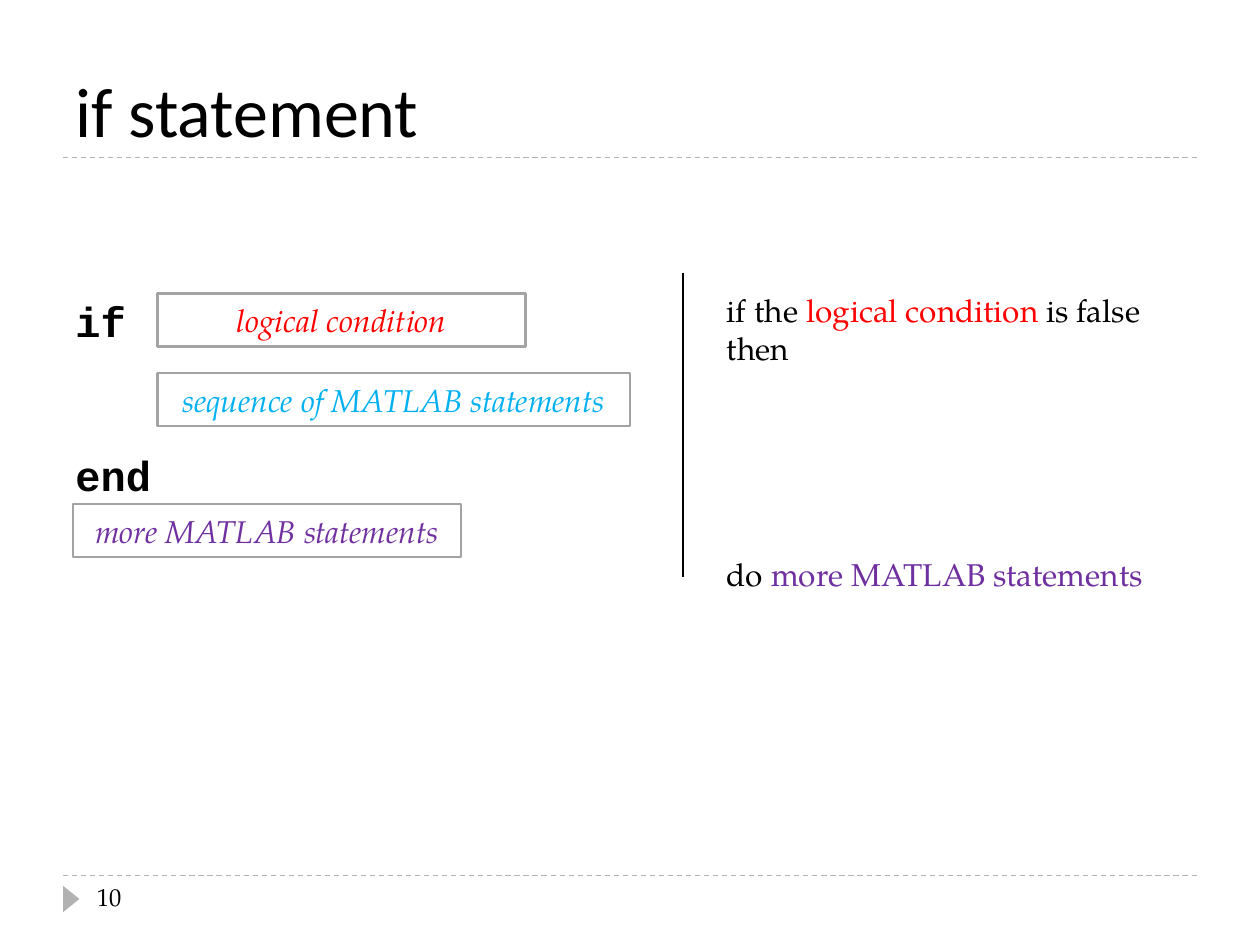
"""Build the slide that explains the if statement."""
import dataclasses

import lxml.etree
import pptx
import pptx.dml.color
import pptx.enum.dml
import pptx.enum.shapes
import pptx.enum.text
import pptx.oxml.ns
import pptx.util

Inches = pptx.util.Inches
Pt = pptx.util.Pt
Shape = pptx.enum.shapes.MSO_SHAPE
Align = pptx.enum.text.PP_ALIGN
Anchor = pptx.enum.text.MSO_ANCHOR

HEX = {
    "black": "000000",
    "red": "FF0000",
    "blue": "00B0F0",
    "purple": "7030A0",
    "gray": "B2B2B2",
    "edge": "A3A3A3",
}
SERIF = "TeX Gyre Pagella"


@dataclasses.dataclass
class Box:
    text: str
    color: str
    left: float
    top: float
    width: float


@dataclasses.dataclass
class Rule:
    start: tuple[float, float]
    end: tuple[float, float]
    color: str
    dashed: bool


BOXES = [
    Box("sequence of MATLAB statements", "blue", 1.25, 2.96, 3.75),
    Box("logical condition", "red", 1.25, 2.33, 2.92),
    Box("more MATLAB statements", "purple", 0.58, 4, 3.08),
]
RULES = [
    Rule((0.5, 6.95), (9.5, 6.95), "gray", True),
    Rule((0.5, 1.25), (9.5, 1.25), "gray", True),
    Rule((5.42, 2.17), (5.42, 4.58), "black", False),
]


def color(name: str) -> pptx.dml.color.RGBColor:
    return pptx.dml.color.RGBColor.from_string(HEX[name])


def write(frame, *lines, font=SERIF, size=18, bold=False, slant=False,
          align=Align.LEFT, anchor=Anchor.TOP, gap=0) -> None:
    """Write lines of (text, color) runs, with a gap in points between lines."""
    frame.word_wrap = True
    frame.auto_size = pptx.enum.text.MSO_AUTO_SIZE.NONE
    frame.vertical_anchor = anchor
    for i, line in enumerate(lines):
        para = frame.add_paragraph() if i else frame.paragraphs[0]
        para.alignment = align
        para.space_before = Pt(gap if i else 0)
        for text, tint in line:
            run = para.add_run()
            run.text = text
            run.font.name = font
            run.font.size = Pt(size)
            run.font.bold = bold
            run.font.italic = slant
            run.font.color.rgb = color(tint)


def add_text(slide, left: float, top: float, width: float, height: float,
             *lines, **style) -> None:
    area = slide.shapes.add_textbox(
        Inches(left), Inches(top), Inches(width), Inches(height))
    write(area.text_frame, *lines, **style)


def add_box(slide, box: Box) -> None:
    shape = slide.shapes.add_shape(
        Shape.RECTANGLE, Inches(box.left), Inches(box.top),
        Inches(box.width), Inches(0.42))
    shape.shadow.inherit = False
    shape.fill.background()
    shape.line.color.rgb = color("edge")
    shape.line.width = Pt(1.5)
    write(shape.text_frame, [(box.text, box.color)], slant=True,
          align=Align.CENTER, anchor=Anchor.MIDDLE)


def add_rule(slide, rule: Rule) -> None:
    line = slide.shapes.add_connector(
        pptx.enum.shapes.MSO_CONNECTOR.STRAIGHT,
        *map(Inches, rule.start + rule.end))
    line.line.color.rgb = color(rule.color)
    line.line.width = Pt(0.75)
    if rule.dashed:
        line.line.dash_style = pptx.enum.dml.MSO_LINE.DASH
    lxml.etree.SubElement(
        line._element.spPr, pptx.oxml.ns.qn("a:effectLst"))


def add_mark(slide) -> None:
    mark = slide.shapes.add_shape(
        Shape.ISOSCELES_TRIANGLE, Inches(0.46), Inches(7.07),
        Inches(0.21), Inches(0.13))
    mark.rotation = 90
    mark.shadow.inherit = False
    mark.fill.solid()
    mark.fill.fore_color.rgb = color("gray")
    mark.line.fill.background()


def main() -> None:
    deck = pptx.Presentation()
    deck.slide_width, deck.slide_height = Inches(10), Inches(7.5)
    slide = deck.slides.add_slide(deck.slide_layouts[5])

    title = slide.shapes.title
    title.left, title.top = Inches(0.5), Inches(0.17)
    title.width, title.height = Inches(9), Inches(1.08)
    write(title.text_frame, [("if statement", "black")],
          font="Calibri", size=40, anchor=Anchor.BOTTOM)

    for rule in RULES:
        add_rule(slide, rule)
    add_mark(slide)
    add_text(slide, 0.67, 6.95, 2.17, 0.4, [("10", "black")], size=14)
    add_text(slide, 0.5, 2.3, 1, 1.7, [("if", "black")], [("end", "black")],
             font="Courier New", size=24, bold=True, gap=59)
    for box in BOXES:
        add_box(slide, box)
    add_text(
        slide, 5.67, 2.26, 4, 2.5,
        [("if the ", "black"), ("logical condition", "red"),
         (" is false then", "black")],
        [("do ", "black"), ("more MATLAB statements", "purple")],
        gap=108)
    deck.save("out.pptx")


if __name__ == "__main__":
    main()
